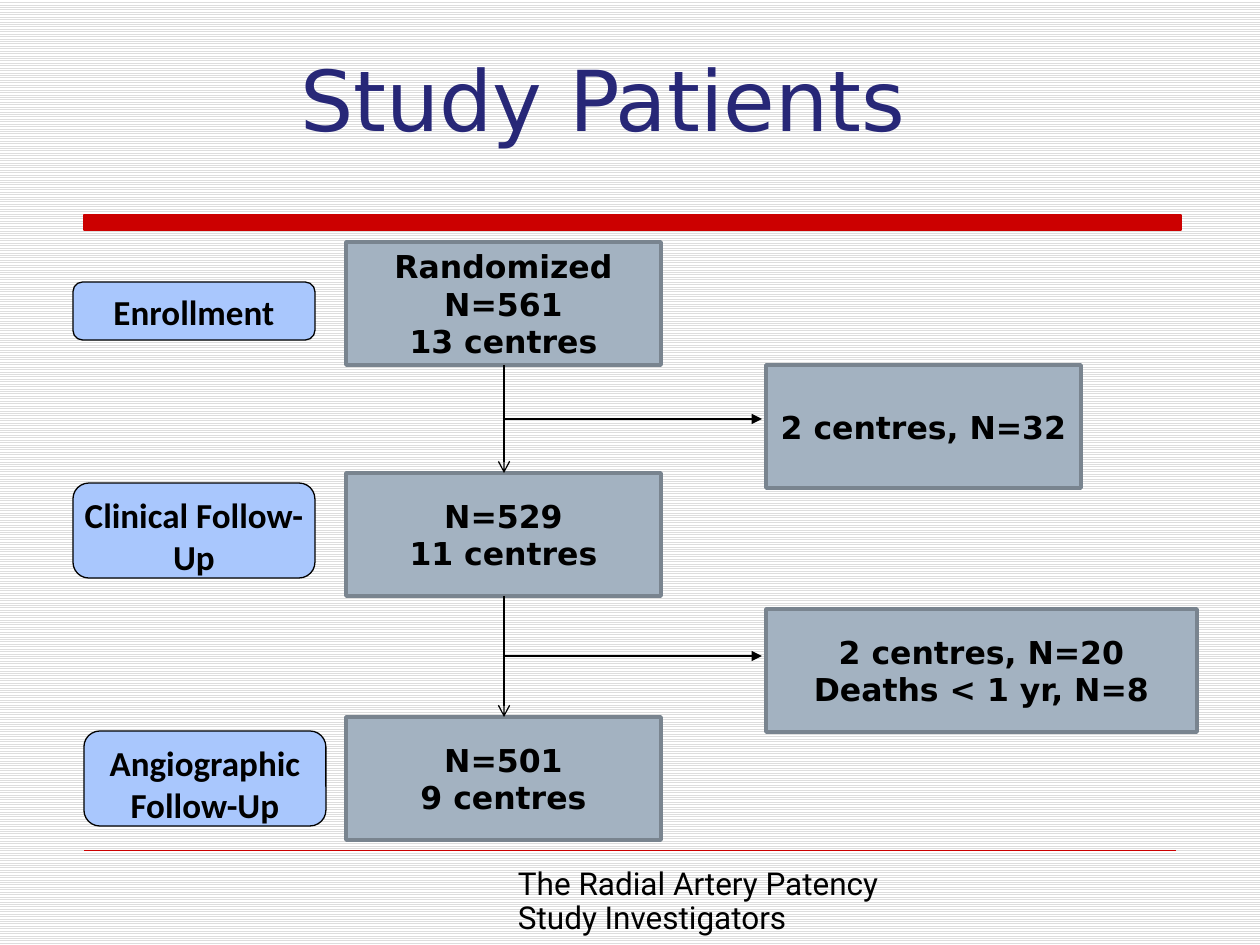
from lxml import etree
from pptx import Presentation
from pptx.dml.color import RGBColor
from pptx.enum.dml import MSO_PATTERN
from pptx.enum.shapes import MSO_CONNECTOR, MSO_SHAPE
from pptx.enum.text import MSO_ANCHOR, PP_ALIGN
from pptx.oxml.ns import qn
from pptx.util import Emu, Pt

PROCESS = MSO_SHAPE.FLOWCHART_PROCESS
ROUNDED = MSO_SHAPE.ROUNDED_RECTANGLE
RECT = MSO_SHAPE.RECTANGLE
STRAIGHT = MSO_CONNECTOR.STRAIGHT
STRIPES = MSO_PATTERN.LIGHT_HORIZONTAL
LEFT, CENTER = PP_ALIGN.LEFT, PP_ALIGN.CENTER
TOP, MIDDLE = MSO_ANCHOR.TOP, MSO_ANCHOR.MIDDLE

COLORS = {
    "stripe": "DDDDDD", "white": "FFFFFF", "red": "CC0000", "black": "000000",
    "title": "272777", "box": "A3B2C1", "box_line": "79848F", "stage": "A9C7FD",
}
BOX_W, BOX_H = 315, 123
FLOW_X, SIDE_X = 346, 766
STAGE_W = 242


def px(n):
    return Emu(round(n * 914400 / 126))


def rgb(name):
    return RGBColor.from_string(COLORS[name])


def put_text(s, lines, font="DejaVu Sans", size=18, color="black", bold=False,
             align=CENTER, anchor=TOP, insets=(13, 6, 13, 6), spacing=None):
    tf = s.text_frame
    tf.word_wrap = True
    tf.vertical_anchor = anchor
    (tf.margin_left, tf.margin_top,
     tf.margin_right, tf.margin_bottom) = map(px, insets)
    for i, line in enumerate(lines):
        p = tf.add_paragraph() if i else tf.paragraphs[0]
        p.alignment = align
        p.line_spacing = spacing
        r = p.add_run()
        r.text = line
        r.font.name, r.font.size, r.font.bold = font, Pt(size), bold
        r.font.color.rgb = rgb(color)


def add_text(slide, x, y, w, h, lines, **fmt):
    put_text(slide.shapes.add_textbox(px(x), px(y), px(w), px(h)), lines, **fmt)


def add_shape(slide, kind, x, y, w, h, fill, line, weight):
    s = slide.shapes.add_shape(kind, px(x), px(y), px(w), px(h))
    s.shadow.inherit = False
    s.fill.solid()
    s.fill.fore_color.rgb = rgb(fill)
    s.line.color.rgb = rgb(line)
    s.line.width = Pt(weight)
    return s


def add_box(slide, x, y, lines, w=BOX_W):
    s = add_shape(slide, PROCESS, x, y, w, BOX_H, "box", "box_line", 2)
    put_text(s, lines, bold=True, anchor=MIDDLE)


def add_stage(slide, x, y, h, label):
    s = add_shape(slide, ROUNDED, x, y, STAGE_W, h, "stage", "black", 0.75)
    put_text(s, [label], font="Calibri", size=20, bold=True, insets=(6, 6, 6, 6))


def add_line(slide, x1, y1, x2, y2, color="black", weight=0.75, head=None):
    c = slide.shapes.add_connector(STRAIGHT, px(x1), px(y1), px(x2), px(y2))
    c.line.color.rgb = rgb(color)
    c.line.width = Pt(weight)
    if head:
        ln = c.line._get_or_add_ln()
        etree.SubElement(ln, qn("a:tailEnd"), type=head)
    etree.SubElement(c._element.spPr, qn("a:effectLst"))


def main():
    prs = Presentation()
    prs.slide_width, prs.slide_height = px(1260), px(945)
    slide = prs.slides.add_slide(prs.slide_layouts[6])

    # Striped background
    fill = slide.background.fill
    fill.patterned()
    fill.pattern = STRIPES
    fill.fore_color.rgb = rgb("stripe")
    fill.back_color.rgb = rgb("white")

    # Title bar, footer rule and footer
    add_shape(slide, RECT, 84, 215, 1097, 15, "red", "red", 0.75)
    add_line(slide, 84, 850, 1176, 850, color="red", weight=0.25)
    add_text(slide, 505, 862, 471, 81,
             ["The Radial Artery Patency Study Investigators"],
             font="Roboto", align=LEFT, spacing=0.9, insets=(13, 6, 50, 6))

    # Main flow, top to bottom
    flow = [
        (242, ["Randomized N=561", "13 centres"]),
        (473, ["N=529", "11 centres"]),
        (717, ["N=501", "9 centres"]),
    ]
    for y, lines in flow:
        add_box(slide, FLOW_X, y, lines)

    # Patients leaving between two steps
    exits = [
        (BOX_W, ["2 centres, N=32"]),
        (431, ["2 centres, N=20", "Deaths < 1 yr, N=8"]),
    ]
    mid_x = FLOW_X + BOX_W // 2 + 1
    for (y, _), (next_y, _), (w, lines) in zip(flow, flow[1:], exits):
        bottom = y + BOX_H
        branch_y = (bottom + next_y) // 2
        add_line(slide, mid_x, bottom, mid_x, next_y, head="arrow")
        add_line(slide, mid_x, branch_y, SIDE_X - 4, branch_y, head="triangle")
        add_box(slide, SIDE_X, next_y - 108, lines, w=w)

    # Study stages
    for x, y, h, label in [
        (73, 282, 58, "Enrollment"),
        (73, 483, 95, "Clinical Follow-Up"),
        (84, 731, 95, "Angiographic Follow-Up"),
    ]:
        add_stage(slide, x, y, h, label)

    # Title, centred a little left of the slide's middle
    add_text(slide, 0, 42, 1206, 115, ["Study Patients"], size=48, color="title")

    prs.save("out.pptx")


if __name__ == "__main__":
    main()
